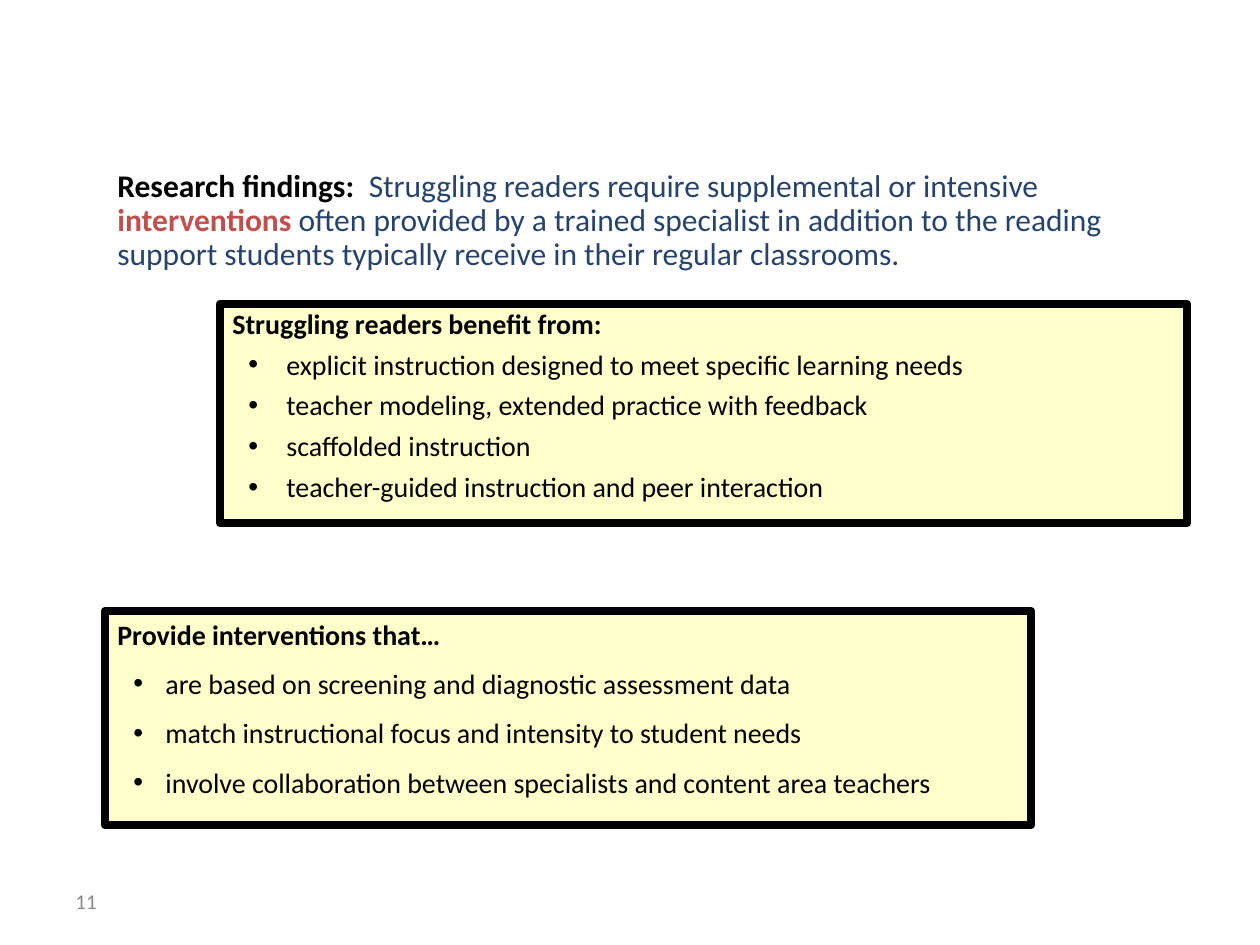
from lxml import etree
from pptx import Presentation
from pptx.dml.color import RGBColor
from pptx.enum.shapes import MSO_SHAPE
from pptx.enum.text import MSO_ANCHOR, PP_ALIGN
from pptx.oxml.ns import qn
from pptx.util import Emu, Pt

RECT = MSO_SHAPE.RECTANGLE
TOP, MIDDLE = MSO_ANCHOR.TOP, MSO_ANCHOR.MIDDLE
LEFT = PP_ALIGN.LEFT

BLACK = RGBColor(0x00, 0x00, 0x00)
NAVY = RGBColor(0x27, 0x43, 0x6C)
RED = RGBColor(0xC0, 0x50, 0x4D)
CREAM = RGBColor(0xFF, 0xFF, 0xCC)
GRAY = RGBColor(0x89, 0x89, 0x89)

FONT = "Calibri"
SCALE = 914400 / 126

FINDINGS = [
    ("Research findings:  ", BLACK, True),
    ("Struggling readers require supplemental or intensive ", NAVY, False),
    ("interventions", RED, True),
    (" often provided by a trained specialist in addition to the reading "
     "support students typically receive in their regular classrooms.", NAVY, False),
]
NEEDS = [
    "explicit instruction designed to meet specific learning needs",
    "teacher modeling, extended practice with feedback",
    "scaffolded instruction",
    "teacher-guided instruction and peer interaction",
]
ACTIONS = [
    "are based on screening and diagnostic assessment data",
    "match instructional focus and intensity to student needs",
    "involve collaboration between specialists and content area teachers",
]


def px(n):
    return Emu(round(n * SCALE))


def style(run, size, color, bold=False):
    font = run.font
    font.name, font.size, font.bold = FONT, Pt(size), bold
    font.color.rgb = color


def add_bullet(para, left, hang):
    props = para._p.get_or_add_pPr()
    props.set("marL", str(px(left)))
    props.set("indent", str(-px(hang)))
    etree.SubElement(props, qn("a:buFont")).set("typeface", "Arial")
    etree.SubElement(props, qn("a:buChar")).set("char", "•")


def add_text(slide, box, parts, size, spacing=1.0, anchor=TOP):
    """Add one paragraph made of (text, color, bold) parts."""
    frame = slide.shapes.add_textbox(*map(px, box)).text_frame
    frame.word_wrap = True
    frame.vertical_anchor = anchor
    para = frame.paragraphs[0]
    para.line_spacing = spacing
    for text, color, bold in parts:
        run = para.add_run()
        run.text = text
        style(run, size, color, bold)


def add_panel(slide, box, title, items, indent, spacing, gap):
    """Add a framed box with a bold title above a bullet list."""
    panel = slide.shapes.add_shape(RECT, *map(px, box))
    panel.shadow.inherit = False
    panel.fill.solid()
    panel.fill.fore_color.rgb = CREAM
    panel.line.color.rgb = BLACK
    panel.line.width = Pt(5)
    frame = panel.text_frame
    frame.word_wrap = True
    frame.vertical_anchor = TOP
    frame.text = "\n".join([title, *items])
    for i, para in enumerate(frame.paragraphs):
        para.alignment = LEFT
        para.line_spacing = spacing
        if i:
            para.level = 1
            para.space_before = Pt(gap)
            add_bullet(para, *indent)
        style(para.runs[0], 16, BLACK, bold=i == 0)


def main():
    deck = Presentation()
    deck.slide_width, deck.slide_height = px(1260), px(945)
    slide = deck.slides.add_slide(deck.slide_layouts[6])

    add_text(slide, (105, 164, 1081, 115), FINDINGS, 18, spacing=0.9)
    add_panel(slide, (220, 304, 967, 219), "Struggling readers benefit from:",
              NEEDS, (54, 38), 0.9, 6)
    add_panel(slide, (105, 611, 926, 214), "Provide interventions that…",
              ACTIONS, (48, 32), 1.0, 9)
    add_text(slide, (63, 876, 294, 50), [("11", GRAY, False)], 12, anchor=MIDDLE)

    deck.save("out.pptx")


if __name__ == "__main__":
    main()
